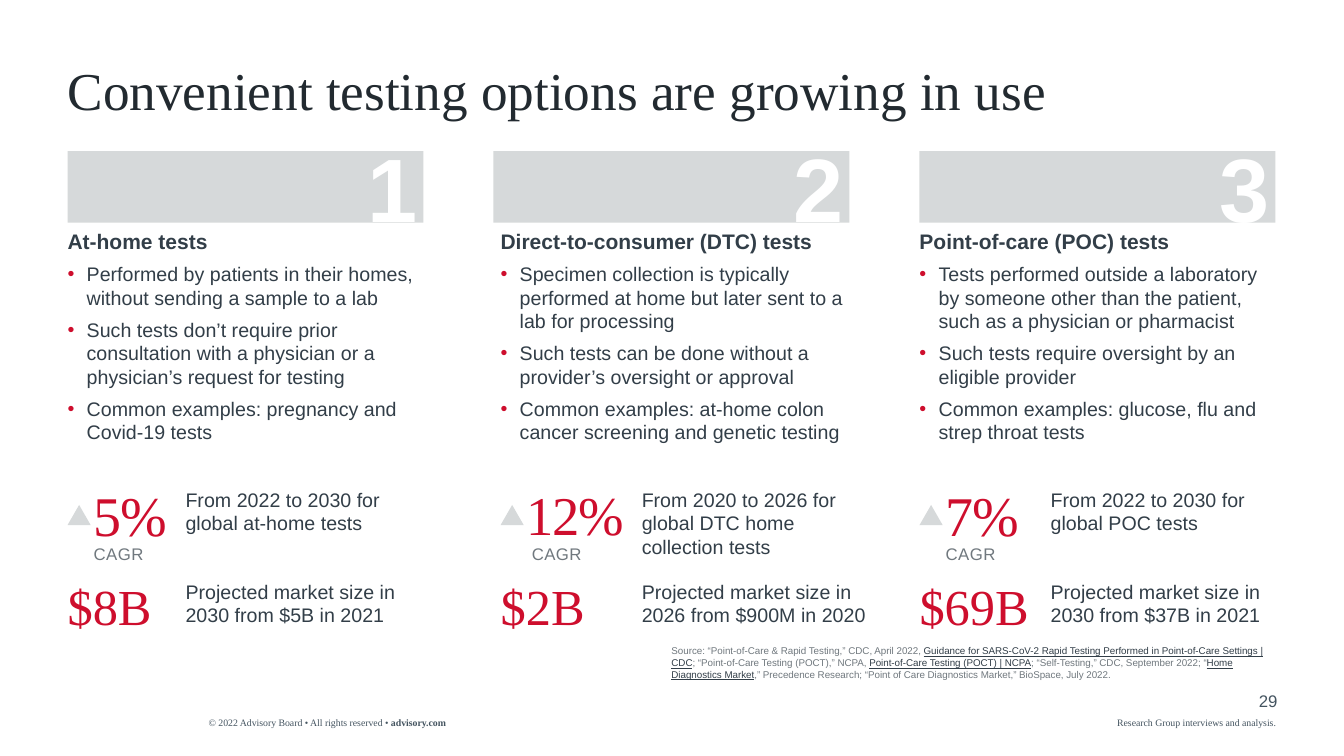
from lxml.etree import SubElement
from pptx import Presentation
from pptx.dml.color import RGBColor
from pptx.enum.shapes import MSO_SHAPE
from pptx.enum.text import MSO_ANCHOR, PP_ALIGN
from pptx.oxml.ns import qn
from pptx.util import Inches, Pt

SANS, SERIF = "Arial", "Times New Roman"
INK, TITLE_INK, RED = "323E48", "222A30", "CE0E2D"
GREY, FOOTER, PALE, WHITE = "70787E", "445460", "D6D9DA", "FFFFFF"

MARGIN = 0.67
BAND_WIDTH, BAND_HEIGHT = 3.53, 0.71
COLUMN_STEP = 4.225
COLUMN_TOP = 1.5


def color(value):
    return RGBColor.from_string(value)


def add_bullet(paragraph):
    properties = paragraph._p.get_or_add_pPr()
    indent = Inches(0.19)
    properties.set("marL", str(indent))
    properties.set("indent", str(-indent))
    bullet_color = SubElement(properties, qn("a:buClr"))
    SubElement(bullet_color, qn("a:srgbClr"), val=RED)
    SubElement(properties, qn("a:buFont"), typeface=SANS)
    SubElement(properties, qn("a:buChar"), char="•")


def add_text(slide, box, paragraphs, size=14, font=SANS, ink=INK, bold=False,
             align=PP_ALIGN.LEFT, anchor=MSO_ANCHOR.TOP, bullets=False,
             line_spacing=None, tracking=None, inset=0, wrap=True):
    """Each paragraph is a string or a list of (text, run format) pairs."""
    shape = slide.shapes.add_textbox(*map(Inches, box))
    frame = shape.text_frame
    frame.word_wrap = wrap
    frame.vertical_anchor = anchor
    frame.margin_left = frame.margin_right = Inches(inset)
    frame.margin_top = frame.margin_bottom = Inches(inset / 2)
    if isinstance(paragraphs, str):
        paragraphs = [paragraphs]
    for index, content in enumerate(paragraphs):
        paragraph = frame.add_paragraph() if index else frame.paragraphs[0]
        paragraph.alignment = align
        if line_spacing:
            paragraph.line_spacing = line_spacing
        if index:
            paragraph.space_before = Pt(6)
        if bullets:
            add_bullet(paragraph)
        runs = [(content, {})] if isinstance(content, str) else content
        for text, style in runs:
            run = paragraph.add_run()
            run.text = text
            run.font.name = font
            run.font.size = Pt(size)
            run.font.bold = style.get("bold", bold)
            run.font.underline = style.get("underline", False)
            run.font.color.rgb = color(style.get("ink", ink))
            if tracking:
                run._r.get_or_add_rPr().set("spc", str(round(tracking * 100)))
    return shape


def add_block(slide, kind, box):
    shape = slide.shapes.add_shape(kind, *map(Inches, box))
    shape.shadow.inherit = False
    shape.fill.solid()
    shape.fill.fore_color.rgb = color(PALE)
    shape.line.fill.background()


def add_band(slide, left, top, number):
    add_block(slide, MSO_SHAPE.RECTANGLE, (left, top, BAND_WIDTH, BAND_HEIGHT))
    add_text(slide, (left + 2.88, top - 0.23, 0.7, 1.18), str(number),
             size=64.3, ink=WHITE, bold=True, inset=0.1, wrap=False)


def add_statistics(slide, left, top, option):
    note_left = left + option["note_offset"]
    # Growth rate
    add_block(slide, MSO_SHAPE.ISOSCELES_TRIANGLE, (left, top + 0.25, 0.23, 0.2))
    add_text(slide, (left + 0.26, top + 0.01, 1.7, 0.67), option["growth"],
             size=option["growth_size"], font=SERIF, ink=RED, tracking=-1)
    add_text(slide, (left + option["label_offset"], top + 0.63, 2.1, 0.2),
             "CAGR", size=12, ink=GREY, tracking=0.3)
    add_text(slide, (note_left, top + 0.08, 2.31, 0.47), option["growth_note"])
    # Market size
    add_text(slide, (left, top + 0.95, 1.18, 0.61), option["market"],
             size=36, font=SERIF, ink=RED)
    add_text(slide, (note_left, top + 0.99, 2.31, 0.47), option["market_note"])


def add_option(slide, left, top, number, option):
    add_band(slide, left, top, number)
    text_left = left + option["text_offset"]
    add_text(slide, (text_left, top + 0.77, 3.53, 0.25), option["name"],
             size=15, bold=True)
    add_text(slide, (text_left, top + 1.1, 3.53, 1.82), option["points"],
             bullets=True)
    add_statistics(slide, text_left, top + 3.26, option)


def add_footer(slide):
    link = {"ink": INK, "underline": True}
    sources = [
        ("Source: “Point-of-Care & Rapid Testing,” CDC, April 2022, ", {}),
        ("Guidance for SARS-CoV-2 Rapid Testing Performed in "
         "Point-of-Care Settings | CDC", link),
        ("; “Point-of-Care Testing (POCT),” NCPA, ", {}),
        ("Point-of-Care Testing (POCT) | NCPA", link),
        ("; “Self-Testing,” CDC, September 2022; “", {}),
        ("Home Diagnostics Market", link),
        (",” Precedence Research; “Point of Care Diagnostics Market,” "
         "BioSpace, July 2022.", {}),
    ]
    add_text(slide, (6.66, 6.4, 6, 0.35), [sources], size=7, ink=GREY,
             anchor=MSO_ANCHOR.BOTTOM)
    rights = [("© 2022 Advisory Board • All rights reserved • ", {}),
              ("advisory.com", {"bold": True})]
    add_text(slide, (2.07, 7.11, 3.26, 0.12), [rights], size=7, font=SERIF,
             ink=FOOTER)
    add_text(slide, (11.08, 7.11, 1.59, 0.12),
             "Research Group interviews and analysis.", size=7, font=SERIF,
             ink=FOOTER)
    add_text(slide, (12.17, 6.85, 0.5, 0.2), "29", size=12, ink=FOOTER,
             align=PP_ALIGN.RIGHT)


OPTIONS = [
    dict(name="At-home tests", text_offset=0, note_offset=1.17, label_offset=0.26,
         points=["Performed by patients in their homes, without sending a sample to a lab",
                 "Such tests don’t require prior consultation with a physician "
                 "or a physician’s request for testing",
                 "Common examples: pregnancy and Covid-19 tests"],
         growth="5%", growth_size=40,
         growth_note="From 2022 to 2030 for global at-home tests",
         market="$8B", market_note="Projected market size in 2030 from $5B in 2021"),
    dict(name="Direct-to-consumer (DTC) tests", text_offset=0.07, note_offset=1.4,
         label_offset=0.31,
         points=["Specimen collection is typically performed at home but later "
                 "sent to a lab for processing",
                 "Such tests can be done without a provider’s oversight or approval",
                 "Common examples: at-home colon cancer screening and genetic testing"],
         growth="12%", growth_size=39,
         growth_note="From 2020 to 2026 for global DTC home collection tests",
         market="$2B", market_note="Projected market size in 2026 from $900M in 2020"),
    dict(name="Point-of-care (POC) tests", text_offset=0, note_offset=1.3,
         label_offset=0.26,
         points=["Tests performed outside a laboratory by someone other than the "
                 "patient, such as a physician or pharmacist",
                 "Such tests require oversight by an eligible provider",
                 "Common examples: glucose, flu and strep throat tests"],
         growth="7%", growth_size=40,
         growth_note="From 2022 to 2030 for global POC tests",
         market="$69B", market_note="Projected market size in 2030 from $37B in 2021"),
]


def main():
    presentation = Presentation()
    presentation.slide_width = Inches(13.33)
    presentation.slide_height = Inches(7.5)
    slide = presentation.slides.add_slide(presentation.slide_layouts[6])
    add_text(slide, (MARGIN, 0.64, 12, 0.59),
             "Convenient testing options are growing in use", size=38,
             font=SERIF, ink=TITLE_INK, line_spacing=0.9)
    for index, option in enumerate(OPTIONS):
        add_option(slide, MARGIN + index * COLUMN_STEP, COLUMN_TOP, index + 1, option)
    add_footer(slide)
    presentation.save("out.pptx")


if __name__ == "__main__":
    main()
